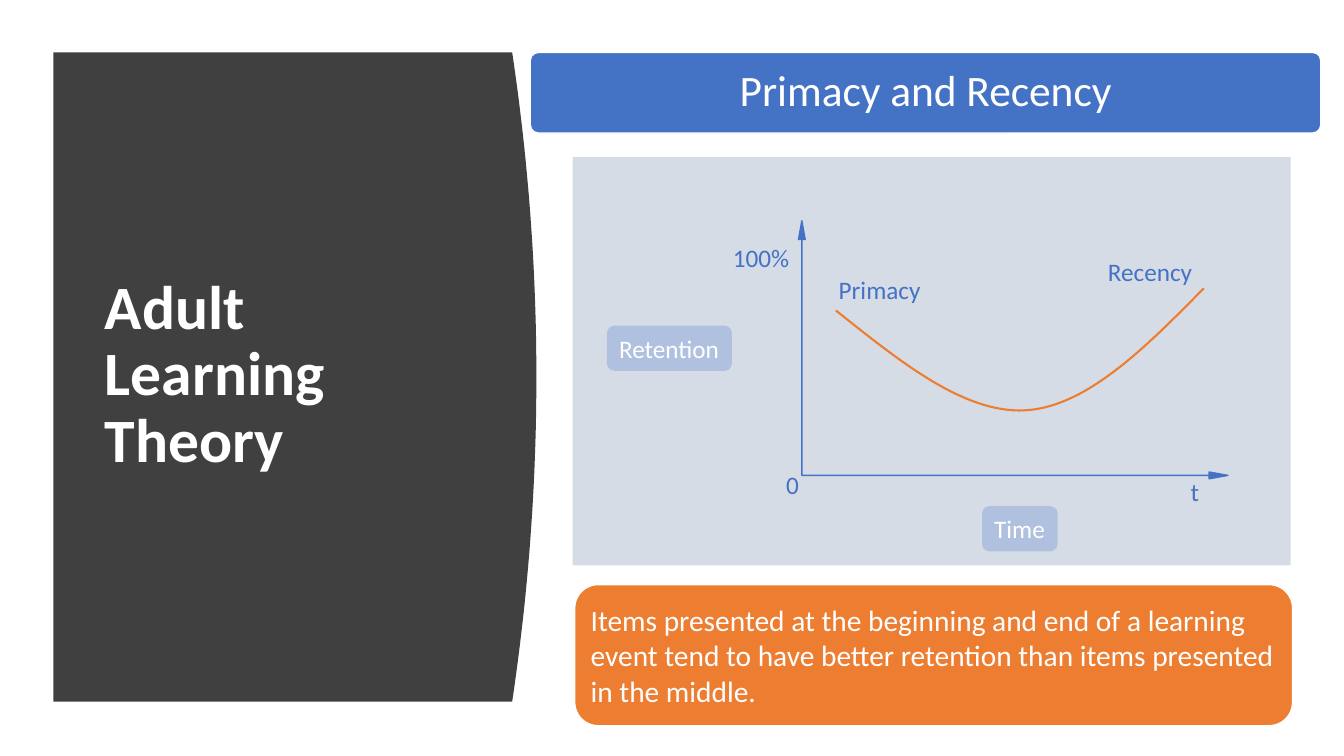
from dataclasses import dataclass

from lxml import etree
from pptx import Presentation
from pptx.dml.color import RGBColor
from pptx.enum.shapes import MSO_SHAPE
from pptx.enum.text import MSO_ANCHOR, MSO_AUTO_SIZE, PP_ALIGN
from pptx.oxml.ns import qn
from pptx.shapes.autoshape import Shape
from pptx.slide import Slide
from pptx.util import Inches, Pt

RECTANGLE = MSO_SHAPE.RECTANGLE
ROUNDED = MSO_SHAPE.ROUNDED_RECTANGLE
AXES = MSO_SHAPE.LEFT_UP_ARROW
MIDDLE = MSO_ANCHOR.MIDDLE
LEFT, CENTER = PP_ALIGN.LEFT, PP_ALIGN.CENTER
FIT_SHAPE, NO_FIT = MSO_AUTO_SIZE.SHAPE_TO_FIT_TEXT, MSO_AUTO_SIZE.NONE

FONT = "Calibri"
WHITE, CHARCOAL, BLUE = "FFFFFF", "404040", "4472C4"
ORANGE, PALE_BLUE, CHIP_BLUE = "ED7D31", "D6DCE5", "8FAADC"
TITLE_ONLY = 5
CURVE_STEPS = 48

Point = tuple[float, float]


@dataclass(frozen=True)
class Box:
    left: float
    top: float
    width: float
    height: float

    def emu(self) -> tuple[int, int, int, int]:
        return (Inches(self.left), Inches(self.top),
                Inches(self.width), Inches(self.height))


@dataclass(frozen=True)
class Label:
    text: str
    box: Box


CHIPS = [
    Label("Time", Box(9.74, 5.02, 0.75, 0.45)),
    Label("Retention", Box(6.02, 3.23, 1.24, 0.45)),
]
CHART_LABELS = [
    Label("Primacy", Box(8.22, 2.67, 1.02, 0.4)),
    Label("Recency", Box(10.89, 2.49, 1.05, 0.4)),
    Label("0", Box(7.7, 4.61, 0.33, 0.4)),
    Label("100%", Box(7.17, 2.35, 0.77, 0.4)),
    Label("t", Box(11.71, 4.68, 0.29, 0.4)),
]
RETENTION_BEZIERS = [
    [(8.29, 3.08), (8.93, 3.59), (9.57, 4.11), (10.18, 4.07)],
    [(10.18, 4.07), (10.78, 4.03), (11.36, 3.45), (11.94, 2.86)],
]


def color(value: str) -> RGBColor:
    return RGBColor.from_string(value)


def paint(shape: Shape, fill: str | None, line: str | None = None, width: float = 1) -> None:
    shape.shadow.inherit = False
    if fill:
        shape.fill.solid()
        shape.fill.fore_color.rgb = color(fill)
    else:
        shape.fill.background()
    if line:
        shape.line.color.rgb = color(line)
        shape.line.width = Pt(width)
    else:
        shape.line.fill.background()


def add_block(slide: Slide, kind: MSO_SHAPE, box: Box, fill: str,
              line: str | None = None) -> Shape:
    block = slide.shapes.add_shape(kind, *box.emu())
    paint(block, fill, line)
    return block


def write(shape: Shape, text: str, size: float, hue: str = WHITE, align: PP_ALIGN = LEFT,
          spacing: float = 1.0, bold: bool = False) -> None:
    frame = shape.text_frame
    frame.text = text
    frame.word_wrap = True
    paragraph = frame.paragraphs[0]
    paragraph.alignment = align
    paragraph.line_spacing = spacing
    font = paragraph.runs[0].font
    font.name, font.size, font.bold = FONT, Pt(size), bold
    font.color.rgb = color(hue)


def hug_text(shape: Shape) -> None:
    shape.text_frame.word_wrap = False
    shape.text_frame.auto_size = FIT_SHAPE


def set_insets(shape: Shape, horizontal: float, vertical: float) -> None:
    frame = shape.text_frame
    frame.margin_left = frame.margin_right = Inches(horizontal)
    frame.margin_top = frame.margin_bottom = Inches(vertical)


def add_outline(slide: Slide, points: list[Point], close: bool) -> Shape:
    vertices = [(Inches(x), Inches(y)) for x, y in points]
    builder = slide.shapes.build_freeform(*vertices[0])
    builder.add_line_segments(vertices[1:], close=close)
    return builder.convert_to_shape()


def bezier_point(controls: list[Point], t: float) -> Point:
    weights = ((1 - t) ** 3, 3 * t * (1 - t) ** 2, 3 * t ** 2 * (1 - t), t ** 3)
    x, y = (sum(w * c for w, c in zip(weights, axis)) for axis in zip(*controls))
    return x, y


def add_title_panel(slide: Slide) -> None:
    left, top, middle, bottom, bulge = 0.53, 0.52, 3.74, 6.96, 5.32
    half = bottom - middle
    heights = [top + (bottom - top) * i / CURVE_STEPS for i in range(CURVE_STEPS + 1)]
    edge = [(bulge - 0.24 * ((y - middle) / half) ** 2, y) for y in heights]
    panel = add_outline(slide, [(left, top), *edge, (left, bottom)], True)
    paint(panel, CHARCOAL)

    title = slide.shapes.title
    slide.shapes.element.append(title.element)
    title.left, title.top, title.width, title.height = Box(0.94, 1.11, 3.74, 5.24).emu()
    write(title, "Adult Learning Theory", 44, spacing=0.9, bold=True)
    title.text_frame.vertical_anchor = MIDDLE
    title.text_frame.auto_size = NO_FIT


def add_messages(slide: Slide) -> None:
    takeaway = add_block(slide, ROUNDED, Box(5.7, 5.8, 7.12, 1.4), ORANGE, WHITE)
    write(takeaway, "Items presented at the beginning and end of a learning event tend to "
                    "have better retention than items presented in the middle.", 21)
    set_insets(takeaway, 0.09, 0.09)

    heading = add_block(slide, ROUNDED, Box(5.26, 0.52, 7.84, 0.8), BLUE, WHITE)
    heading.adjustments[0] = 0.1
    write(heading, "Primacy and Recency", 31, align=CENTER, spacing=0.9)
    set_insets(heading, 0.08, 0.06)


def add_retention_graph(slide: Slide) -> None:
    add_block(slide, RECTANGLE, Box(5.68, 1.56, 7.12, 4.05), PALE_BLUE)

    axes = add_block(slide, AXES, Box(7.92, 2.19, 4.26, 2.56), BLUE, BLUE)
    for index, value in enumerate((0, 0.013, 0.073)):
        axes.adjustments[index] = value
    axes.element.spPr.find(qn("a:xfrm")).set("flipH", "1")

    for chip in CHIPS:
        badge = add_block(slide, ROUNDED, chip.box, CHIP_BLUE)
        fill_color = badge.element.spPr.find(qn("a:solidFill"))[0]
        etree.SubElement(fill_color, qn("a:alpha")).set("val", "52000")
        write(badge, chip.text, 18)
        hug_text(badge)

    steps = [i / CURVE_STEPS for i in range(CURVE_STEPS + 1)]
    points = [bezier_point(controls, t) for controls in RETENTION_BEZIERS for t in steps]
    paint(add_outline(slide, points, False), None, ORANGE, 1.5)

    for label in CHART_LABELS:
        caption = slide.shapes.add_textbox(*label.box.emu())
        write(caption, label.text, 18, BLUE)
        hug_text(caption)


def main() -> None:
    deck = Presentation()
    deck.slide_width, deck.slide_height = Inches(13.33), Inches(7.5)
    slide = deck.slides.add_slide(deck.slide_layouts[TITLE_ONLY])
    add_title_panel(slide)
    add_messages(slide)
    add_retention_graph(slide)
    deck.save("out.pptx")


if __name__ == "__main__":
    main()
